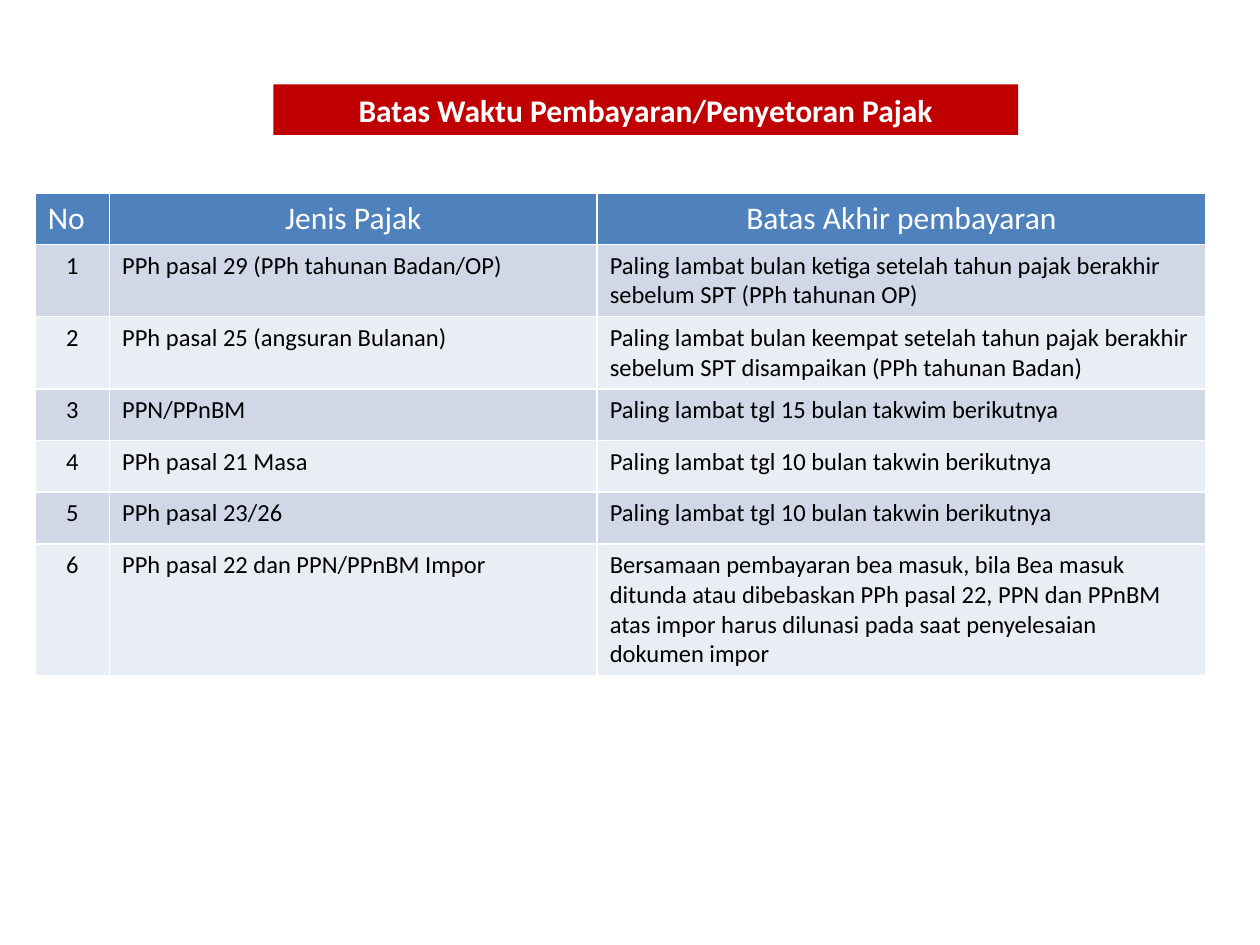
from pptx import Presentation, util as u
from pptx.dml import color
from pptx.enum import text

WIDTHS = (0.59, 3.87, 4.83)
HEIGHT = 0.41
HEADS = ("No", "Jenis Pajak", "Batas Akhir pembayaran")
TAXES = (
    ("PPh pasal 29 (PPh tahunan Badan/OP)",
     "Paling lambat bulan ketiga setelah tahun pajak berakhir sebelum SPT (PPh tahunan OP)"),
    ("PPh pasal 25 (angsuran Bulanan)",
     "Paling lambat bulan keempat setelah tahun pajak berakhir sebelum SPT disampaikan (PPh tahunan Badan)"),
    ("PPN/PPnBM", "Paling lambat tgl 15 bulan takwim berikutnya"),
    ("PPh pasal 21 Masa", "Paling lambat tgl 10 bulan takwin berikutnya"),
    ("PPh pasal 23/26", "Paling lambat tgl 10 bulan takwin berikutnya"),
    ("PPh pasal 22 dan PPN/PPnBM Impor",
     "Bersamaan pembayaran bea masuk, bila Bea masuk ditunda atau dibebaskan PPh pasal 22, "
     "PPN dan PPnBM atas impor harus dilunasi pada saat penyelesaian dokumen impor"),
)


def paint(item, shade):
    item.fill.solid()
    item.fill.fore_color.rgb = color.RGBColor.from_string(shade)


def write(frame, words, size=14, shade="000000", bold=False, center=False, font="Calibri"):
    para = frame.paragraphs[0]
    para.alignment = text.PP_ALIGN.CENTER if center else text.PP_ALIGN.LEFT
    run = para.add_run()
    run.text = words
    run.font.name = font
    run.font.size = u.Pt(size)
    run.font.bold = bold
    run.font.color.rgb = color.RGBColor.from_string(shade)


class Page:
    red, blue, white = "C00000", "4F81BD", "FFFFFF"
    bands = ("D0D8E8", "E9EDF4")

    def __init__(self, deck):
        self.slide = deck.slides.add_slide(deck.slide_layouts[5])

    def title(self, words, left, top, width, height):
        box = self.slide.shapes.title
        box.left, box.top = u.Inches(left), u.Inches(top)
        box.width, box.height = u.Inches(width), u.Inches(height)
        paint(box, self.red)
        frame = box.text_frame
        frame.auto_size = text.MSO_AUTO_SIZE.NONE
        frame.word_wrap = True
        frame.vertical_anchor = text.MSO_ANCHOR.MIDDLE
        write(frame, words, size=18, shade=self.white, bold=True, center=True)

    def table(self, heads, rows, widths, left, top, height):
        count = len(rows) + 1
        grid = self.slide.shapes.add_table(
            count, len(widths), u.Inches(left), u.Inches(top),
            u.Inches(sum(widths)), u.Inches(height * count)).table
        for col, width in zip(grid.columns, widths):
            col.width = u.Inches(width)
        for c, words in enumerate(heads):
            cell = grid.cell(0, c)
            paint(cell, self.blue)
            write(cell.text_frame, words, size=18, shade=self.white, center=c > 0)
        for r, row in enumerate(rows, 1):
            for c, words in enumerate((str(r), *row)):
                cell = grid.cell(r, c)
                paint(cell, self.bands[(r - 1) % 2])
                write(cell.text_frame, words, center=c == 0)


def main():
    deck = Presentation()
    deck.slide_width, deck.slide_height = u.Inches(10), u.Inches(7.5)
    page = Page(deck)
    page.title("Batas Waktu Pembayaran/Penyetoran Pajak", 2.17, 0.67, 5.91, 0.4)
    page.table(HEADS, TAXES, WIDTHS, 0.28, 1.53, HEIGHT)
    deck.save("out.pptx")


if __name__ == "__main__":
    main()
